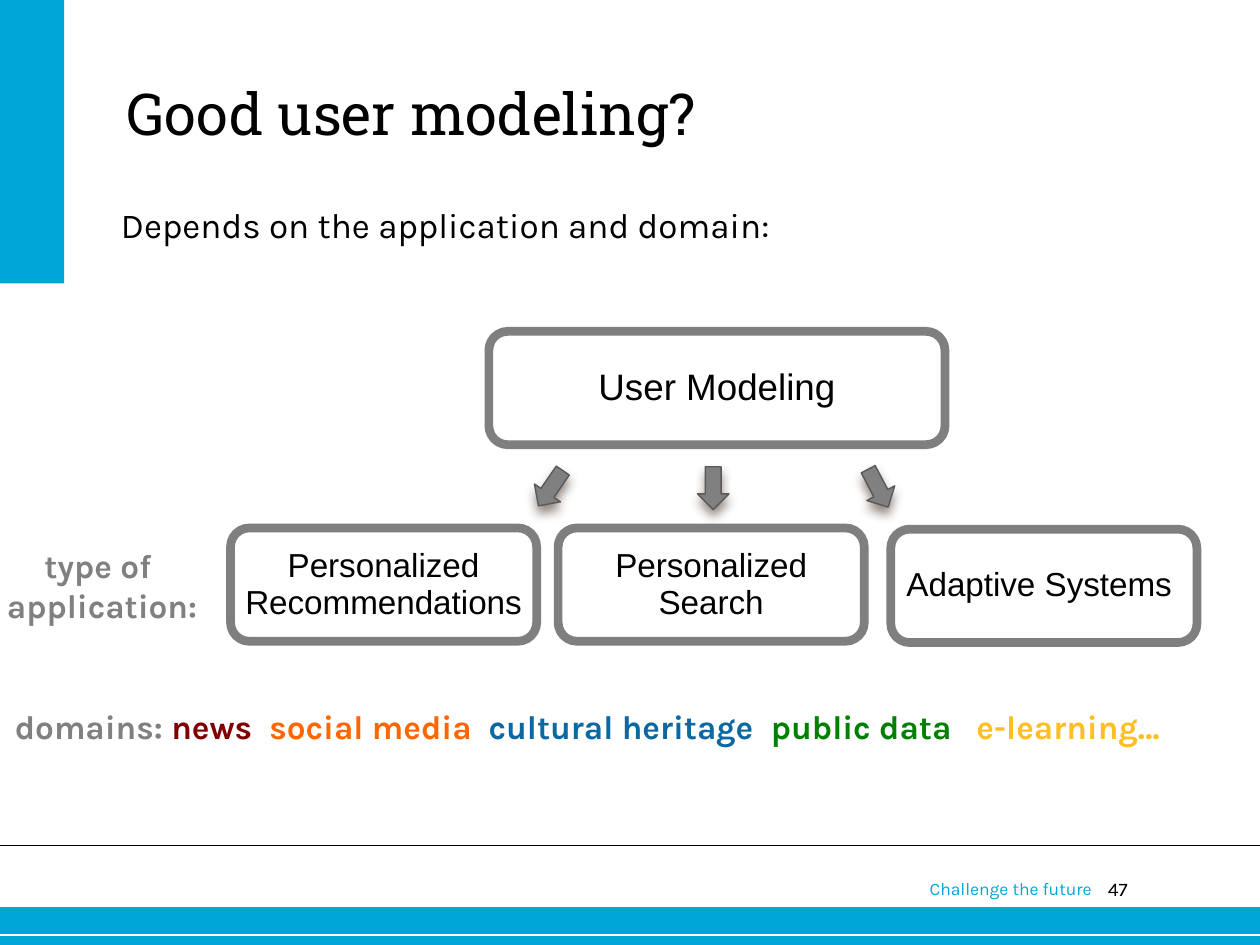
"""Build the slide on good user modeling, its applications and its domains."""
from lxml.etree import SubElement
from pptx import Presentation
from pptx.dml.color import RGBColor
from pptx.enum.shapes import MSO_CONNECTOR, MSO_SHAPE
from pptx.enum.text import MSO_ANCHOR, MSO_AUTO_SIZE, PP_ALIGN
from pptx.oxml.ns import qn
from pptx.util import Inches, Pt

CYAN = RGBColor(0x00, 0xA6, 0xD6)
WHITE = RGBColor(0xFF, 0xFF, 0xFF)
BLACK = RGBColor(0x00, 0x00, 0x00)
GRAY = RGBColor(0x80, 0x80, 0x80)
BORDER = RGBColor(0x7F, 0x7F, 0x7F)
ARROW_EDGE = RGBColor(0x59, 0x59, 0x59)
MAROON = RGBColor(0x80, 0x00, 0x00)
ORANGE = RGBColor(0xFF, 0x66, 0x00)
BLUE = RGBColor(0x0C, 0x68, 0xA3)
GREEN = RGBColor(0x00, 0x80, 0x00)
YELLOW = RGBColor(0xFF, 0xBF, 0x23)
SHADOW = "4E3B30"

TITLE = "Good user modeling?"
LEAD = "Depends on the application and domain:"
BANDS = [(0, 7.2, 10, 0.3), (0, 0, 0.51, 2.25)]
RULES = [(7.42, WHITE, 0.75), (6.71, BLACK, 1)]
BOXES = [
    (["User Modeling"], (3.88, 2.63, 3.62, 0.9), 21),
    (["Personalized", "Recommendations"], (1.83, 4.19, 2.43, 0.9), 19),
    (["Personalized Search"], (4.43, 4.19, 2.43, 0.9), 19),
    (["Adaptive Systems "], (7.07, 4.2, 2.43, 0.9), 19),
]
ARROWS = [(4.2, 124.5), (5.49, 90), (6.8, 62.2)]
DOMAINS = [
    ("domains: ", GRAY),
    ("news\t", MAROON),
    ("social media\t", ORANGE),
    ("cultural heritage\t", BLUE),
    ("public data\t", GREEN),
    ("e-learning…", YELLOW),
]
DOMAIN_TABS = [2.02, 3.76, 6.0, 7.63]


def place(shape, box):
    shape.left, shape.top, shape.width, shape.height = map(Inches, box)


def prepare_frame(frame, insets=(0, 0), anchor=MSO_ANCHOR.TOP, wrap=True):
    frame.margin_left = frame.margin_right = Inches(insets[0])
    frame.margin_top = frame.margin_bottom = Inches(insets[1])
    frame.vertical_anchor = anchor
    frame.word_wrap = wrap
    frame.auto_size = MSO_AUTO_SIZE.NONE


def write(paragraph, runs, size, font, bold=False, align=PP_ALIGN.LEFT):
    paragraph.alignment = align
    for text, color in runs:
        run = paragraph.add_run()
        run.text = text
        run.font.size = Pt(size)
        run.font.name = font
        run.font.bold = bold
        run.font.color.rgb = color


def write_lines(frame, lines, color, size, font, bold=False, spacing=None):
    for number, line in enumerate(lines):
        paragraph = frame.add_paragraph() if number else frame.paragraphs[0]
        paragraph.line_spacing = spacing
        write(paragraph, [(line, color)], size, font, bold, PP_ALIGN.CENTER)


def add_text_frame(slide, box, insets=(0, 0), wrap=True):
    frame = slide.shapes.add_textbox(*map(Inches, box)).text_frame
    prepare_frame(frame, insets, wrap=wrap)
    return frame


def add_filled(slide, kind, box, fill, edge=None, edge_width=0):
    shape = slide.shapes.add_shape(kind, *map(Inches, box))
    shape.shadow.inherit = False
    shape.fill.solid()
    shape.fill.fore_color.rgb = fill
    if edge is None:
        shape.line.fill.background()
    else:
        shape.line.color.rgb = edge
        shape.line.width = Pt(edge_width)
    return shape


def add_rule(slide, y, color, width):
    rule = slide.shapes.add_connector(
        MSO_CONNECTOR.STRAIGHT, 0, Inches(y), Inches(10), Inches(y))
    rule.line.color.rgb = color
    rule.line.width = Pt(width)
    SubElement(rule._element.spPr, qn("a:effectLst"))


def add_arrow(slide, left, angle):
    arrow = add_filled(slide, MSO_SHAPE.RIGHT_ARROW, (left, 3.75, 0.34, 0.25),
                       GRAY, ARROW_EDGE, 0.79)
    arrow.rotation = angle
    effects = arrow._element.spPr.find(qn("a:effectLst"))
    shadow = SubElement(effects, qn("a:outerShdw"), blurRad=str(Pt(6)),
                        dist=str(Pt(4)), dir="5400000", rotWithShape="0")
    color = SubElement(shadow, qn("a:srgbClr"), val=SHADOW)
    SubElement(color, qn("a:alpha"), val="60000")


def add_domains(slide):
    paragraph = add_text_frame(slide, (0.02, 5.56, 9.9, 0.42), (0.1, 0.05)).paragraphs[0]
    tabs = SubElement(paragraph._p.get_or_add_pPr(), qn("a:tabLst"))
    for stop in DOMAIN_TABS:
        SubElement(tabs, qn("a:tab"), pos=str(Inches(stop)), algn="l")
    write(paragraph, DOMAINS, 19, "Karla", bold=True)


def main():
    deck = Presentation()
    deck.slide_width, deck.slide_height = Inches(10), Inches(7.5)
    slide = deck.slides.add_slide(deck.slide_layouts[5])

    for band in BANDS:
        add_filled(slide, MSO_SHAPE.RECTANGLE, band, CYAN)
    for rule in RULES:
        add_rule(slide, *rule)

    page = add_text_frame(slide, (8.46, 6.96, 0.49, 0.28))
    write(page.paragraphs[0], [("47", BLACK)], 11, "Karla", align=PP_ALIGN.RIGHT)
    slogan = add_text_frame(slide, (7.28, 6.92, 1.6, 0.27), (0.1, 0.05))
    write(slogan.paragraphs[0], [("Challenge the future", CYAN)], 10, "Karla")

    title = slide.shapes.title
    place(title, (1, 0.62, 7.83, 1.36))
    prepare_frame(title.text_frame)
    write(title.text_frame.paragraphs[0], [(TITLE, BLACK)], 33, "Roboto Slab")

    lead = add_text_frame(slide, (0.96, 1.6, 7.81, 1.06)).paragraphs[0]
    lead.line_spacing = Pt(25)
    write(lead, [(LEAD, BLACK)], 20, "Karla")

    for lines, box, size in BOXES:
        node = add_filled(slide, MSO_SHAPE.ROUNDED_RECTANGLE, box, WHITE, BORDER, 5)
        prepare_frame(node.text_frame, (0.05, 0.03), MSO_ANCHOR.MIDDLE)
        write_lines(node.text_frame, lines, BLACK, size, "Arial", spacing=0.93)
    for left, angle in ARROWS:
        add_arrow(slide, left, angle)

    add_domains(slide)
    row_label = add_text_frame(slide, (0, 4.28, 1.62, 0.74), (0, 0.05), wrap=False)
    write_lines(row_label, ["type of ", "application:"], GRAY, 19, "Karla", bold=True)

    deck.save("out.pptx")


if __name__ == "__main__":
    main()
